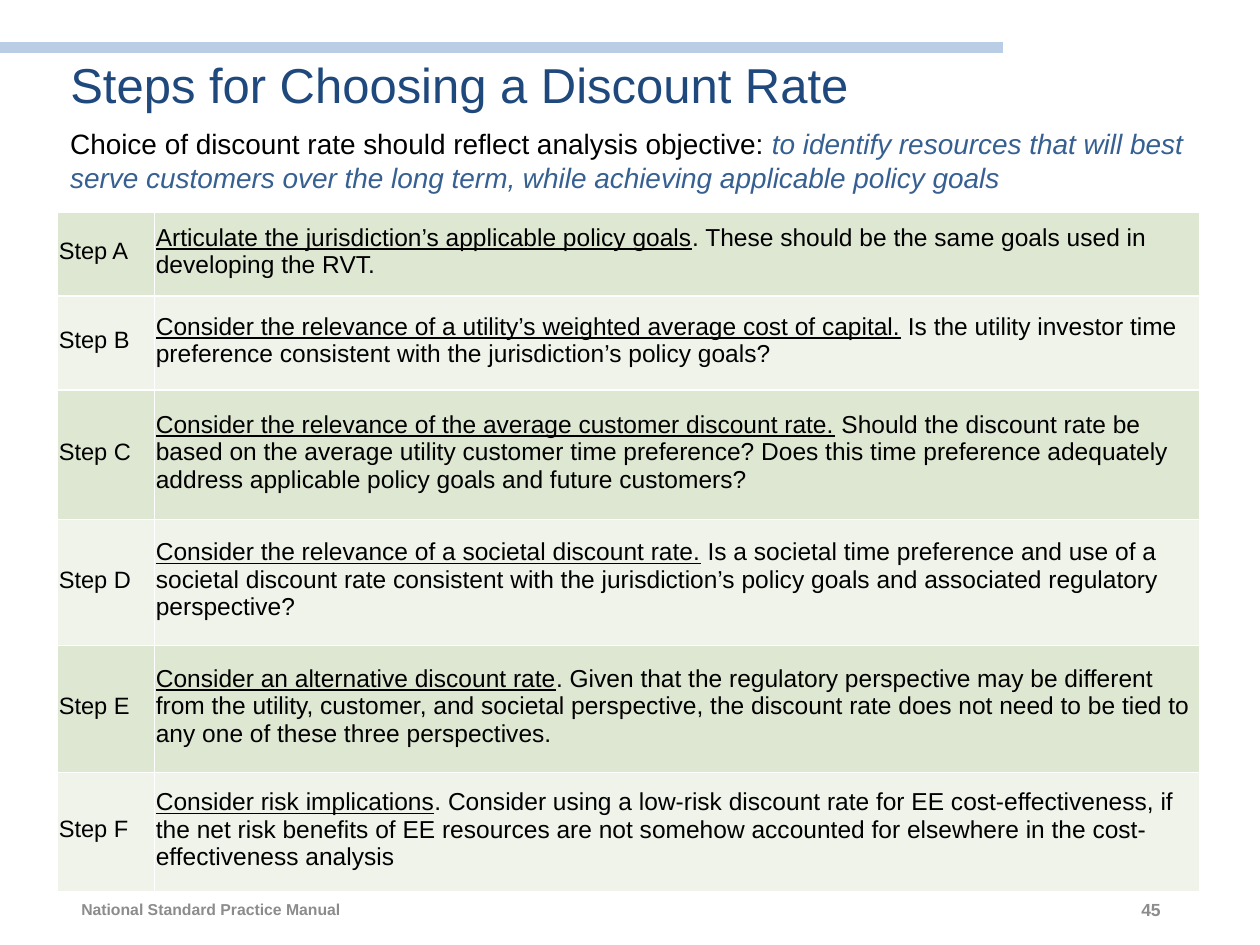
import pptx
import pptx.dml.color
import pptx.enum.shapes
import pptx.enum.text
import pptx.oxml
import pptx.oxml.ns
import pptx.util
from lxml import etree

Pt = pptx.util.Pt
Align = pptx.enum.text.PP_ALIGN
Anchor = pptx.enum.text.MSO_ANCHOR

FONT = "Arial"
BLACK, WHITE, GREY = "000000", "FFFFFF", "8C8C8C"
NAVY, BLUE, PALE_BLUE = "1F497D", "376092", "B9CDE5"
ROW_FILLS = ["DEE7D1", "EFF3EA"]
COLUMN_WIDTHS = [55.4, 597]
STEPS = [
    ("A", 48.2, "Articulate the jurisdiction’s applicable policy goals",
     ". These should be the same goals used in developing the RVT."),
    ("B", 53.6, "Consider the relevance of a utility’s weighted average cost of capital.",
     " Is the utility investor time preference consistent with the jurisdiction’s policy goals?"),
    ("C", 74.2, "Consider the relevance of the average customer discount rate.",
     " Should the discount rate be based on the average utility customer time preference? "
     "Does this time preference adequately address applicable policy goals and future customers?"),
    ("D", 71.8, "Consider the relevance of a societal discount rate.",
     " Is a societal time preference and use of a societal discount rate consistent with "
     "the jurisdiction’s policy goals and associated regulatory perspective?"),
    ("E", 72.6, "Consider an alternative discount rate",
     ". Given that the regulatory perspective may be different from the utility, customer, "
     "and societal perspective, the discount rate does not need to be tied to any one of "
     "these three perspectives."),
    ("F", 68.4, "Consider risk implications",
     ". Consider using a low-risk discount rate for EE cost-effectiveness, if the net risk "
     "benefits of EE resources are not somehow accounted for elsewhere in the "
     "cost-effectiveness analysis"),
]


def color(value):
    return pptx.dml.color.RGBColor.from_string(value)


def add_span(para, text, size, tint=BLACK, bold=False, italic=False, underline=False):
    span = para.add_run()
    span.text = text
    font = span.font
    font.name, font.size = FONT, Pt(size)
    font.bold, font.italic, font.underline = bold, italic, underline
    font.color.rgb = color(tint)


def add_box(page, left, top, width, height, align=Align.LEFT, anchor=Anchor.TOP):
    box = page.shapes.add_textbox(Pt(left), Pt(top), Pt(width), Pt(height))
    box.text_frame.word_wrap = True
    box.text_frame.vertical_anchor = anchor
    para = box.text_frame.paragraphs[0]
    para.alignment = align
    return para


def add_rule(page):
    rule = page.shapes.add_connector(
        pptx.enum.shapes.MSO_CONNECTOR.STRAIGHT, Pt(-4), Pt(27.2), Pt(573), Pt(27.2))
    rule.line.color.rgb = color(PALE_BLUE)
    rule.line.width = Pt(6)
    etree.SubElement(rule._element.spPr, pptx.oxml.ns.qn("a:effectLst"))


def set_title(page, text):
    title = page.shapes.title
    title.left, title.top, title.width, title.height = Pt(33), Pt(23), Pt(620.6), Pt(54.7)
    title.text_frame.auto_size = pptx.enum.text.MSO_AUTO_SIZE.NONE
    title.text_frame.vertical_anchor = Anchor.MIDDLE
    para = title.text_frame.paragraphs[0]
    para.alignment = Align.LEFT
    para.line_spacing = 0.9
    add_span(para, text, 28, NAVY)


def format_cell(cell, fill, top_width):
    cell.fill.solid()
    cell.fill.fore_color.rgb = color(fill)
    cell.vertical_anchor = Anchor.MIDDLE
    cell.margin_left = cell.margin_right = cell.margin_top = Pt(0.7)
    cell.margin_bottom = Pt(3.6)
    properties = cell._tc.get_or_add_tcPr()
    widths = {"lnL": 1, "lnR": 1, "lnT": top_width, "lnB": 1}
    for index, (side, width) in enumerate(widths.items()):
        border = pptx.oxml.parse_xml(
            f'<a:{side} {pptx.oxml.ns.nsdecls("a")} w="{Pt(width)}">'
            f'<a:solidFill><a:srgbClr val="{WHITE}"/></a:solidFill></a:{side}>')
        properties.insert(index, border)


def add_steps(page):
    height = sum(step[1] for step in STEPS)
    table = page.shapes.add_table(
        len(STEPS), 2, Pt(33), Pt(121), Pt(sum(COLUMN_WIDTHS)), Pt(height)).table
    table.first_row = False
    table.horz_banding = False
    for column, width in zip(table.columns, COLUMN_WIDTHS):
        column.width = Pt(width)
    for index, (letter, row_height, lead, detail) in enumerate(STEPS):
        table.rows[index].height = Pt(row_height)
        label, description = table.rows[index].cells
        for cell in (label, description):
            format_cell(cell, ROW_FILLS[index % 2], 1 if index else 1.5)
        add_span(label.text_frame.paragraphs[0], f"Step {letter}", 13.5)
        para = description.text_frame.paragraphs[0]
        add_span(para, lead, 14, underline=True)
        add_span(para, detail, 14)


def main():
    deck = pptx.Presentation()
    deck.slide_width, deck.slide_height = Pt(720), Pt(540)
    page = deck.slides.add_slide(deck.slide_layouts[5])
    add_rule(page)
    set_title(page, "Steps for Choosing a Discount Rate")
    add_steps(page)
    objective = add_box(page, 33, 69, 669, 67.7)
    add_span(objective, "Choice of discount rate should reflect analysis objective: ", 16)
    add_span(objective, "to identify resources that will best serve customers over the long "
             "term, while achieving applicable policy goals", 16, BLUE, italic=True)
    footer = add_box(page, 0, 505, 243.4, 28.8, Align.CENTER, Anchor.MIDDLE)
    add_span(footer, "National Standard Practice Manual ", 9, GREY, bold=True)
    number = add_box(page, 508.3, 506.2, 162, 27.4, Align.RIGHT, Anchor.MIDDLE)
    add_span(number, "45", 10, GREY, bold=True)
    deck.save("out.pptx")


if __name__ == "__main__":
    main()
